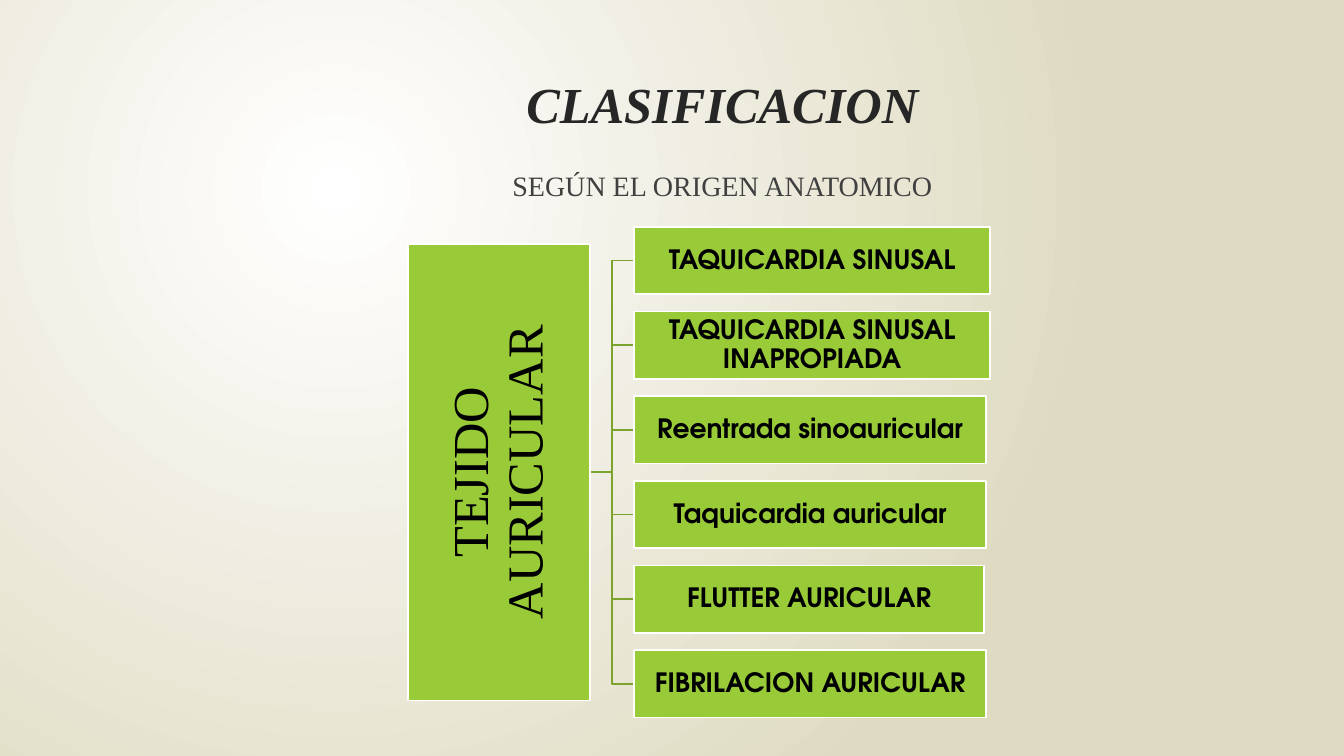
from pptx import Presentation
from pptx import util as u
from pptx.dml.color import RGBColor
from pptx.enum import shapes, text
from pptx.oxml import parse_xml
from pptx.oxml.ns import nsdecls, qn

SERIF, SANS = "Times New Roman", "TeX Gyre Adventor"
ITEMS = [
    ("TAQUICARDIA SINUSAL", 3.53),
    ("TAQUICARDIA SINUSAL INAPROPIADA", 3.53),
    ("Reentrada sinoauricular", 3.49),
    ("Taquicardia auricular", 3.49),
    ("FLUTTER AURICULAR", 3.47),
    ("FIBRILACION AURICULAR", 3.49),
]


def color(code):
    return RGBColor.from_string(code)


def write(shape, words, tone, anchor, inset=None, space=None, **font):
    frame = shape.text_frame
    frame.word_wrap = True
    frame.vertical_anchor = anchor
    if inset is not None:
        for side in ("left", "top", "right", "bottom"):
            setattr(frame, "margin_" + side, u.Inches(inset))
    para = frame.paragraphs[0]
    para.alignment = text.PP_ALIGN.CENTER
    if space:
        para.line_spacing = space
    run = para.add_run()
    run.text = words
    run.font.color.rgb = color(tone)
    for key, value in font.items():
        setattr(run.font, key, value)


def backdrop(slide):
    """Fill the slide with a round glow centred in its upper left."""
    fill = slide.background.fill
    fill.gradient()
    for stop, tone in zip(fill.gradient_stops, ("FFFFFF", "DFDBC2")):
        stop.color.rgb = color(tone)
    grad = slide.element.find(".//" + qn("a:gradFill"))
    grad.replace(grad.find(qn("a:lin")), parse_xml(
        f'<a:path {nsdecls("a")} path="circle"><a:fillToRect '
        'l="50000" t="50000" r="100000" b="100000"/></a:path>'))


def heading(slide, left, top, width):
    title = slide.shapes.title
    title.left, title.top = u.Inches(left), u.Inches(top)
    title.width, title.height = u.Inches(width), u.Inches(1.4)
    write(title, "CLASIFICACION", "262626", text.MSO_ANCHOR.TOP,
          name=SERIF, size=u.Pt(36), bold=True, italic=True)
    sub = slide.shapes.add_textbox(u.Inches(left), u.Inches(top + 0.94),
                                   u.Inches(width), u.Inches(5.71))
    write(sub, "SEGÚN EL ORIGEN ANATOMICO", "404040", text.MSO_ANCHOR.TOP,
          name=SERIF, size=u.Pt(20))


def box(slide, left, top, width, height):
    rect = slide.shapes.add_shape(
        shapes.MSO_SHAPE.RECTANGLE, u.Inches(left), u.Inches(top),
        u.Inches(width), u.Inches(height))
    rect.shadow.inherit = False
    rect.fill.solid()
    rect.fill.fore_color.rgb = color("99CB38")
    rect.line.color.rgb = color("FFFFFF")
    rect.line.width = u.Pt(1.25)
    return rect


def branch(slide, *ends):
    link = slide.shapes.add_connector(
        shapes.MSO_CONNECTOR.ELBOW, *[u.Inches(end) for end in ends])
    link.line.color.rgb = color("7BA32D")
    link.line.width = u.Pt(1.25)
    link.element.spPr.append(parse_xml(f'<a:effectLst {nsdecls("a")}/>'))


def tree(slide, left, top):
    """Draw the upright root and, to its right, one box per item."""
    thick, length, gap, high, pitch = 1.8, 4.53, 0.44, 0.67, 0.84
    right = left + thick
    start = right + gap
    mid = top + (pitch * (len(ITEMS) - 1) + high) / 2
    tops = [top + pitch * row for row in range(len(ITEMS))]

    for y in tops:
        branch(slide, right, mid, start, y + high / 2)

    root = box(slide, left + (thick - length) / 2, mid - thick / 2,
               length, thick)
    root.rotation = 270
    write(root, "TEJIDO AURICULAR", "000000", text.MSO_ANCHOR.MIDDLE,
          0.03, 0.9, name=SERIF, size=u.Pt(36))

    for y, (label, width) in zip(tops, ITEMS):
        write(box(slide, start, y, width, high), label, "000000",
              text.MSO_ANCHOR.MIDDLE, 0.01, 0.9,
              name=SANS, size=u.Pt(19), bold=True)


def main():
    deck = Presentation()
    deck.slide_width, deck.slide_height = u.Inches(13.33), u.Inches(7.5)
    slide = deck.slides.add_slide(deck.slide_layouts.get_by_name("Title Only"))
    backdrop(slide)
    heading(slide, 1.75, 0.68, 10.83)
    tree(slide, 4.05, 2.25)
    deck.save("out.pptx")


if __name__ == "__main__":
    main()
